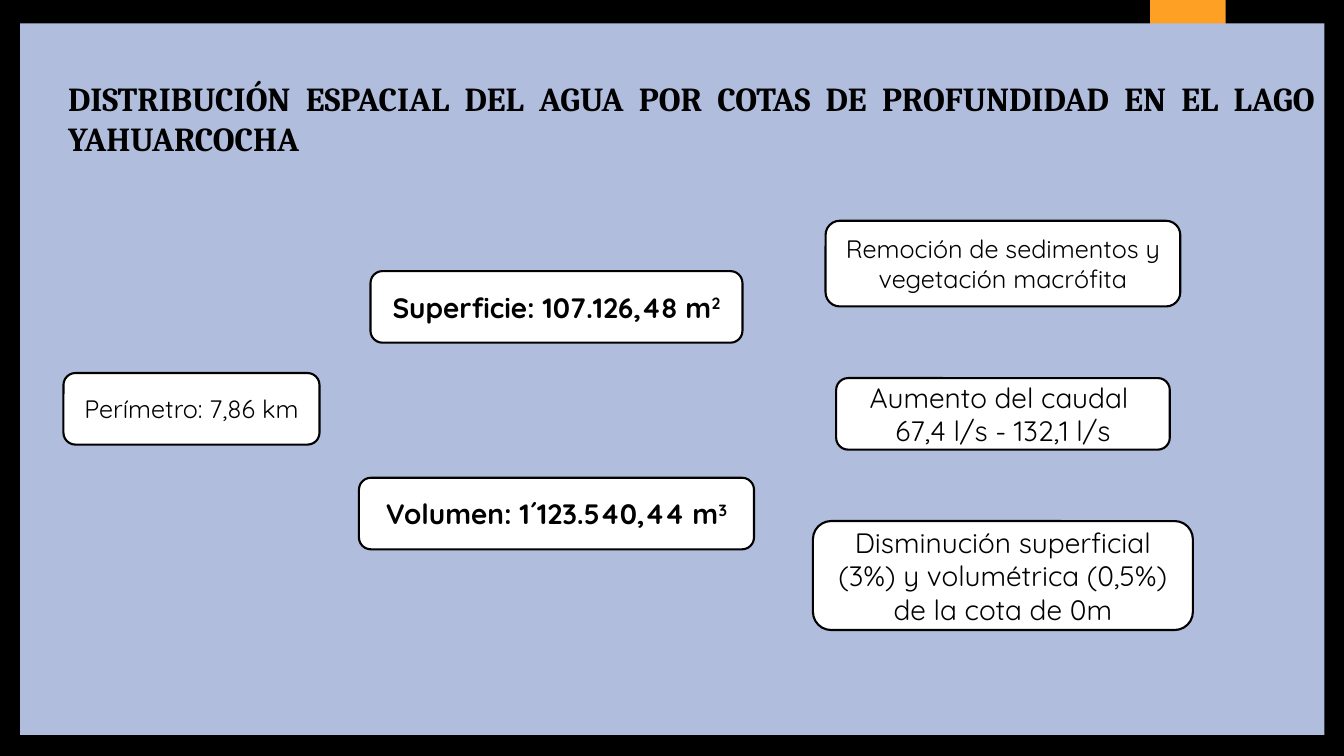
from pptx import Presentation
from pptx.dml.color import RGBColor
from pptx.enum.shapes import MSO_SHAPE
from pptx.enum.text import MSO_ANCHOR, MSO_AUTO_SIZE, PP_ALIGN
from pptx.util import Pt

TITLE = "DISTRIBUCIÓN ESPACIAL DEL AGUA POR COTAS DE PROFUNDIDAD EN EL LAGO YAHUARCOCHA"
COLORS = {"black": "000000", "panel": "B1BDDC", "tab": "FDA023", "box": "FFFFFF"}
SLIDE_SIZE = (960, 540)
PANEL = (14.4, 16.6, 931.7, 508.3)
TAB = (821.5, 0, 54, 90)

# Each column: horizontal centre, then its boxes as
# (vertical centre, width, height, font size, bold, lines, exponent)
COLUMNS = [
    (136.8, [
        (292, 182.9, 51.1, 18, False, ["Perímetro: 7,86 km"], ""),
    ]),
    (397.5, [
        (219.2, 265.7, 51.1, 20, True, ["Superficie: 107.126,48 m"], "2"),
        (366.8, 282.2, 51.1, 20, True, ["Volumen: 1´123.540,44 m"], "3"),
    ]),
    (716.4, [
        (188.3, 253.4, 61.2, 18, False, ["Remoción de sedimentos y vegetación macrófita"], ""),
        (295.6, 238.3, 51.1, 20, False, ["Aumento del caudal ", "67,4 l/s - 132,1 l/s"], ""),
        (411.1, 271.4, 77.8, 20, False,
         ["Disminución superficial (3%) y volumétrica (0,5%) de la cota de 0m"], ""),
    ]),
]


def color(name):
    return RGBColor.from_string(COLORS[name])


def set_attributes(target, values):
    for name, value in values.items():
        setattr(target, name, value)


def paint(fill, name):
    fill.solid()
    fill.fore_color.rgb = color(name)


def add_run(paragraph, text, font_name, size, bold):
    run = paragraph.add_run()
    run.text = text
    set_attributes(run.font, {"name": font_name, "size": Pt(size), "bold": bold})
    run.font.color.rgb = color("black")
    return run


def add_plain_shape(slide, kind, bounds, fill_name):
    shape = slide.shapes.add_shape(kind, *map(Pt, bounds))
    shape.shadow.inherit = False
    paint(shape.fill, fill_name)
    return shape


def add_title_panel(slide):
    """Fill the title placeholder as the panel, in front of the orange tab."""
    title = slide.shapes.title
    set_attributes(title, dict(zip(("left", "top", "width", "height"), map(Pt, PANEL))))
    paint(title.fill, "panel")
    set_attributes(title.text_frame, {
        "word_wrap": True, "auto_size": MSO_AUTO_SIZE.NONE,
        "vertical_anchor": MSO_ANCHOR.TOP,
        "margin_left": Pt(34.2), "margin_top": Pt(39), "margin_right": Pt(7.2),
    })
    paragraph = title.text_frame.paragraphs[0]
    set_attributes(paragraph, {"alignment": PP_ALIGN.JUSTIFY, "line_spacing": 1.0})
    add_run(paragraph, TITLE, "Cambria", 24, True)

    tab = add_plain_shape(slide, MSO_SHAPE.RECTANGLE, TAB, "tab")
    tab.line.fill.background()
    title.element.addprevious(tab.element)


def add_box(slide, center_x, box):
    center_y, width, height, size, bold, lines, exponent = box
    bounds = (center_x - width / 2, center_y - height / 2, width, height)
    shape = add_plain_shape(slide, MSO_SHAPE.ROUNDED_RECTANGLE, bounds, "box")
    shape.line.color.rgb = color("black")
    shape.line.width = Pt(1.5)
    frame = shape.text_frame
    set_attributes(frame, {"word_wrap": True, "vertical_anchor": MSO_ANCHOR.MIDDLE})
    for index, line in enumerate(lines):
        paragraph = frame.add_paragraph() if index else frame.paragraphs[0]
        paragraph.alignment = PP_ALIGN.CENTER
        add_run(paragraph, line, "Quicksand", size, bold)
    if exponent:
        run = add_run(paragraph, exponent, "Quicksand", size, bold)
        run._r.get_or_add_rPr().set("baseline", "30000")


def main():
    presentation = Presentation()
    presentation.slide_width, presentation.slide_height = map(Pt, SLIDE_SIZE)
    slide = presentation.slides.add_slide(presentation.slide_layouts.get_by_name("Title Only"))
    paint(slide.background.fill, "black")
    add_title_panel(slide)
    for center_x, boxes in COLUMNS:
        for box in boxes:
            add_box(slide, center_x, box)
    presentation.save("out.pptx")


if __name__ == "__main__":
    main()
